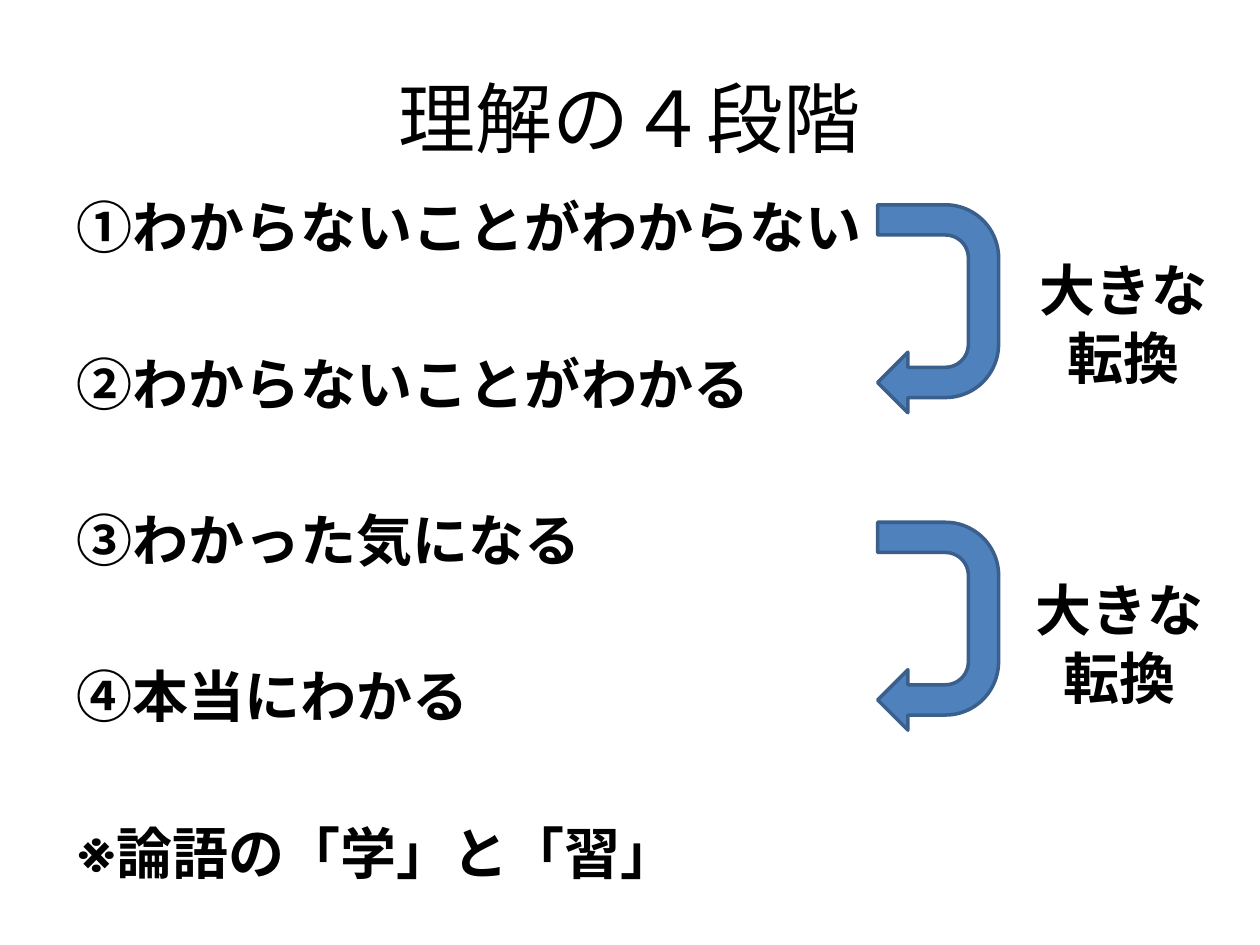
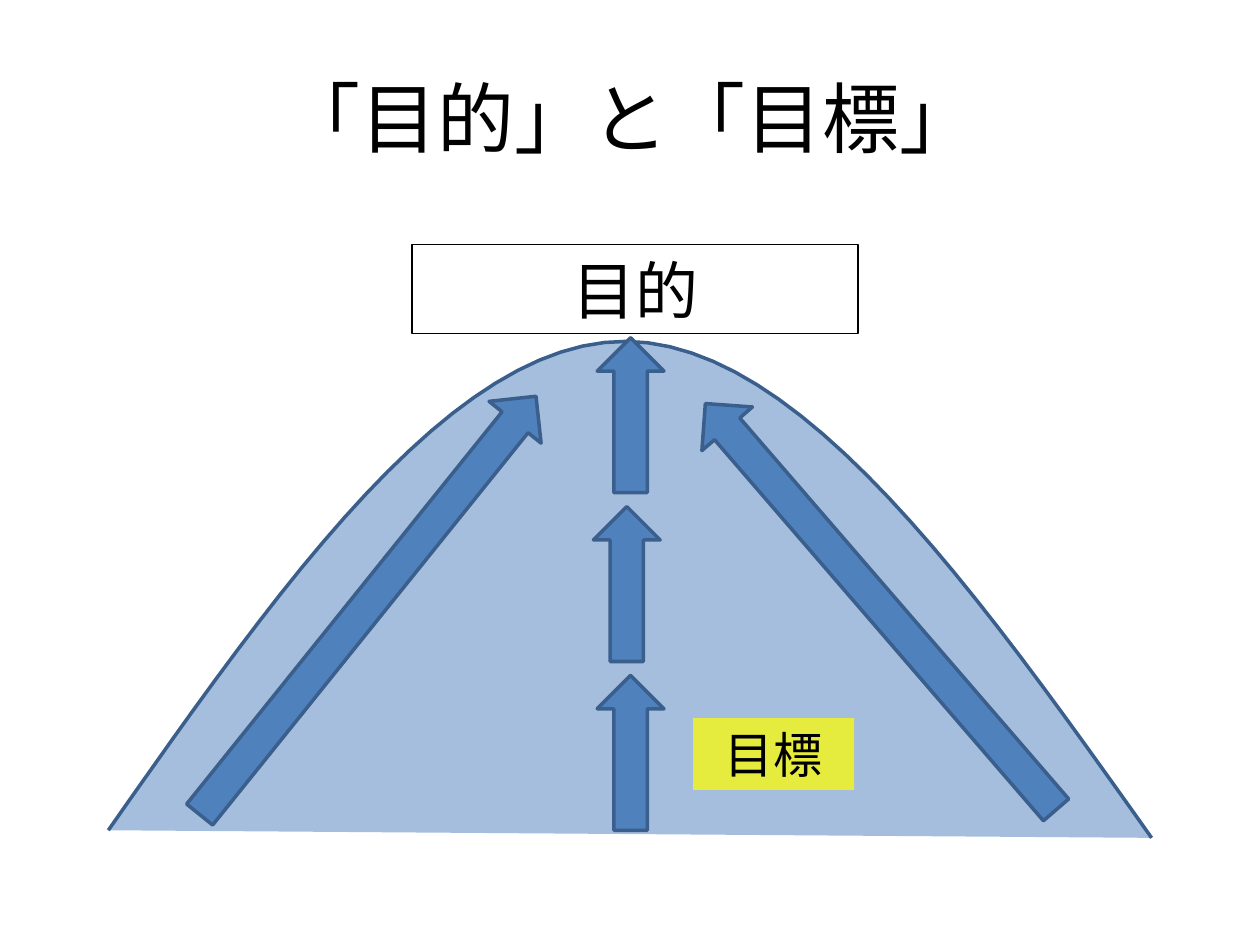
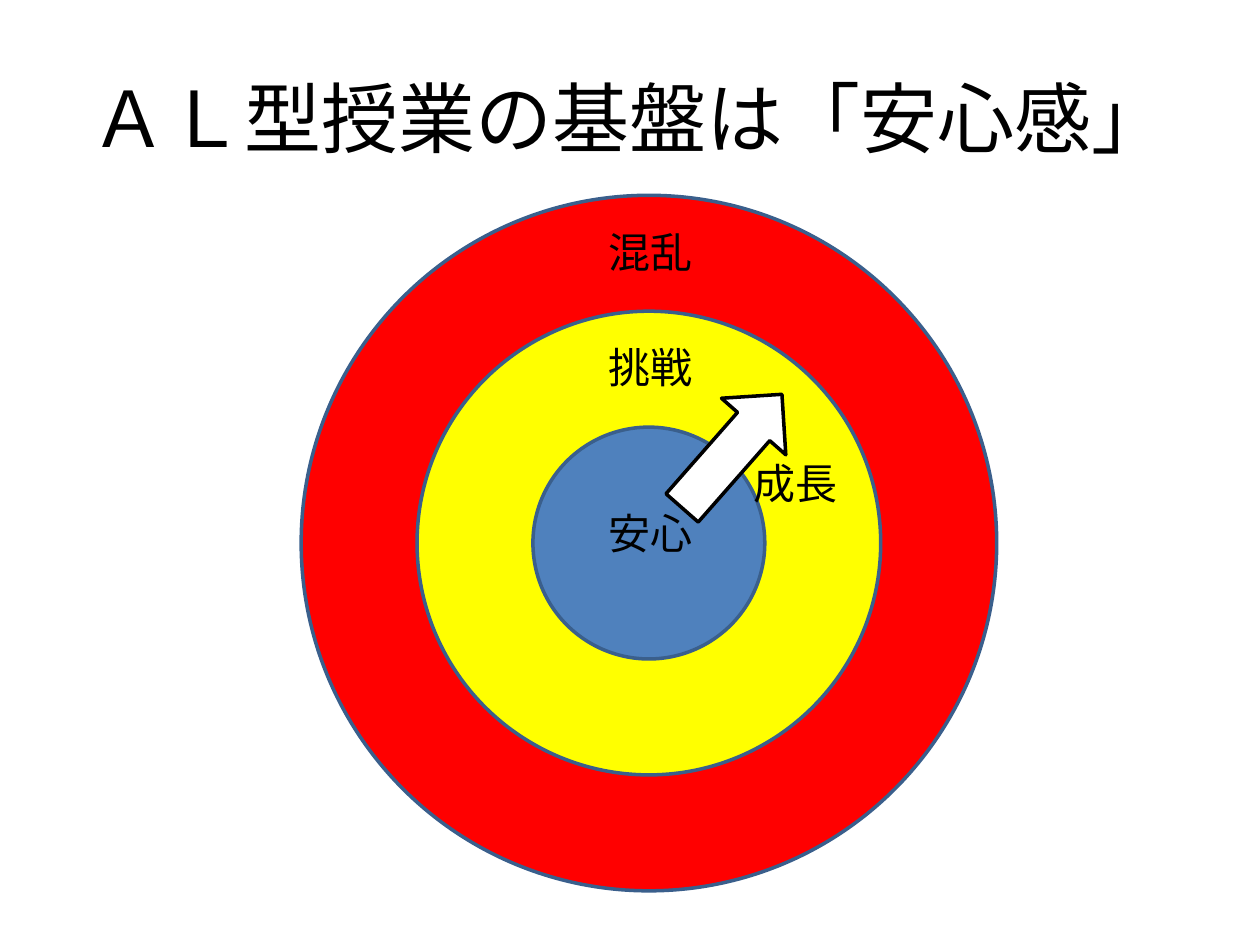
"""Build three slides on stages of learning, aims and a sense of safety."""
from dataclasses import dataclass

from lxml import etree
from pptx import Presentation
from pptx.dml.color import RGBColor
from pptx.enum.lang import MSO_LANGUAGE_ID
from pptx.enum.shapes import MSO_SHAPE
from pptx.enum.text import MSO_ANCHOR, PP_ALIGN
from pptx.oxml.ns import qn
from pptx.util import Inches, Pt

RECT = MSO_SHAPE.RECTANGLE
OVAL = MSO_SHAPE.OVAL
RIGHT = MSO_SHAPE.RIGHT_ARROW
DOWN = MSO_SHAPE.DOWN_ARROW
UTURN = MSO_SHAPE.U_TURN_ARROW
MIDDLE = MSO_ANCHOR.MIDDLE
TOP = MSO_ANCHOR.TOP
CENTER = PP_ALIGN.CENTER
LEFT = PP_ALIGN.LEFT
JAPANESE = MSO_LANGUAGE_ID.JAPANESE
LIST_PAGE, TITLE_PAGE = 1, 5


@dataclass(frozen=True)
class Theme:
    font: str = "Roboto"
    ink: str = "000000"
    blue: str = "4F81BD"
    edge: str = "3A5F8C"
    red: str = "FF0000"
    yellow: str = "FFFF00"
    white: str = "FFFFFF"
    title: int = 44
    goal: int = 36
    body: int = 32
    step: int = 28
    zone: int = 24
    pitch: int = 39
    gap: float = 50.4
    thick: float = 2
    thin: float = 0.75


class Deck:
    def __init__(self, theme):
        self.theme = theme
        self.file = Presentation()
        self.file.slide_width = Inches(10)
        self.file.slide_height = Inches(7.5)
        self.slide = None

    def page(self, title, layout=TITLE_PAGE):
        self.slide = self.file.slides.add_slide(self.file.slide_layouts[layout])
        head = self.slide.shapes.title
        self.place(head, 0.5, 0.3, 9, 1.25)
        self.letter(head, title, self.theme.title, anchor=MIDDLE)

    def place(self, shape, x, y, w, h):
        shape.left, shape.top = Inches(x), Inches(y)
        shape.width, shape.height = Inches(w), Inches(h)

    def letter(self, shape, text, size, bold=False, align=CENTER, anchor=TOP):
        frame = shape.text_frame
        frame.text = text
        frame.word_wrap = True
        frame.vertical_anchor = anchor
        for para in frame.paragraphs:
            para.alignment = align
            for run in para.runs:
                font = run.font
                font.name = self.theme.font
                font.size = Pt(size)
                font.bold = bold
                font.color.rgb = RGBColor.from_string(self.theme.ink)
                font.language_id = JAPANESE
                east = etree.SubElement(font._element, qn("a:ea"))
                east.set("typeface", self.theme.font)
        return frame

    def items(self, lines, x, y, w, h):
        body = self.slide.placeholders[1]
        self.place(body, x, y, w, h)
        frame = self.letter(body, "\n".join(lines), self.theme.body, True, LEFT)
        for para in frame.paragraphs:
            para.line_spacing = Pt(self.theme.pitch)
            para.space_before = Pt(0)
            para.space_after = Pt(self.theme.gap)
            props = para._p.get_or_add_pPr()
            props.set("marL", "0")
            props.set("indent", "0")
            etree.SubElement(props, qn("a:buNone"))

    def label(self, text, x, y, w, h, size, bold=False):
        box = self.slide.shapes.add_textbox(Inches(x), Inches(y), Inches(w), Inches(h))
        return self.letter(box, text, size, bold)

    def paint(self, shape, fill, line, width, alpha=100):
        shape.shadow.inherit = False
        if fill:
            shape.fill.solid()
            shape.fill.fore_color.rgb = RGBColor.from_string(fill)
        else:
            shape.fill.background()
        if alpha < 100:
            tint = shape._element.spPr.find(qn("a:solidFill"))[0]
            etree.SubElement(tint, qn("a:alpha")).set("val", str(alpha * 1000))
        if line:
            shape.line.color.rgb = RGBColor.from_string(line)
            shape.line.width = Pt(width)
        else:
            shape.line.fill.background()

    def shape(self, kind, x, y, w, h, fill, line=None, width=None, turn=0, alpha=100):
        item = self.slide.shapes.add_shape(kind, Inches(x), Inches(y), Inches(w), Inches(h))
        item.rotation = turn
        self.paint(item, fill, line, width or self.theme.thick, alpha)
        return item

    def arrow(self, x, y, w, h, turn, kind=RIGHT):
        return self.shape(kind, x, y, w, h, self.theme.blue, self.theme.edge, turn=turn)

    def curve(self, start, arcs, alpha, count=24):
        pen = self.slide.shapes.build_freeform(Inches(start[0]), Inches(start[1]))
        for arc in arcs:
            ends = (start, *arc)
            dots = [bezier(ends, i / count) for i in range(1, count + 1)]
            pen.add_line_segments([(Inches(x), Inches(y)) for x, y in dots], close=False)
            start = arc[-1]
        self.paint(pen.convert_to_shape(), self.theme.blue, self.theme.edge,
                   self.theme.thick, alpha)


def bezier(ends, t):
    parts = ((1 - t) ** 3, 3 * t * (1 - t) ** 2, 3 * t ** 2 * (1 - t), t ** 3)
    return [sum(p * v for p, v in zip(parts, axis)) for axis in zip(*ends)]


def stages(deck):
    deck.page("理解の４段階", LIST_PAGE)
    deck.items(["①わからないことがわからない", "②わからないことがわかる",
                "③わかった気になる", "④本当にわかる", "※論語の「学」と「習」"],
               0.51, 1.47, 9, 5.98)
    for top, x, y in ((1.97, 8.14, 1.97), (4.49, 8.11, 4.51)):
        turn = deck.arrow(6.62, top, 1.65, 0.96, 90, UTURN)
        for i, value in enumerate((0.25, 0.25, 0.25, 0.44, 1)):
            turn.adjustments[i] = value
        frame = deck.label("大きな\n転換", x, y, 1.55, 1.18, deck.theme.body, True)
        frame.word_wrap = False
        for para in frame.paragraphs:
            para.line_spacing = Pt(deck.theme.pitch)


def aims(deck):
    theme = deck.theme
    deck.page("「目的」と「目標」")
    deck.curve((0.86, 6.59), [((2.22, 4.65), (3.59, 2.7), (4.97, 2.71)),
                              ((6.35, 2.72), (7.75, 4.69), (9.14, 6.65))], 51)
    goal = deck.shape(RECT, 3.27, 1.94, 3.54, 0.71, None, theme.ink, theme.thin)
    deck.letter(goal, "目的", theme.goal, anchor=MIDDLE)
    for x, y, turn in ((0.79, 4.54, 308.8), (4.86, 4.55, 229.2)):
        deck.arrow(x, y, 4.26, 0.53, turn)
    for i, x in enumerate((4.39, 4.36, 4.39)):
        deck.arrow(x, 5.71 - 1.34 * i, 1.23, 0.53, 270)
    step = deck.shape(RECT, 5.5, 5.7, 1.28, 0.57, theme.yellow, alpha=72)
    deck.letter(step, "目標", theme.step, anchor=MIDDLE)


def safety(deck):
    theme = deck.theme
    deck.page("ＡＬ型授業の基盤は「安心感」")
    for ring, fill in ((3, theme.red), (2, theme.yellow), (1, theme.blue)):
        reach = 0.92 * ring
        deck.shape(OVAL, 5.15 - reach, 4.31 - reach, 2 * reach, 2 * reach, fill, theme.edge)
    for text, y in (("安心", 3.98), ("挑戦", 2.66), ("混乱", 1.75)):
        deck.label(text, 4.42, y, 1.48, 0.62, theme.zone)
    deck.shape(DOWN, 5.47, 2.98, 0.68, 1.2, theme.white, theme.ink, turn=221.3)
    deck.label("成長", 5.57, 3.58, 1.48, 0.62, theme.zone)


def main():
    deck = Deck(Theme())
    for build in (stages, aims, safety):
        build(deck)
    deck.file.save("out.pptx")


if __name__ == "__main__":
    main()
